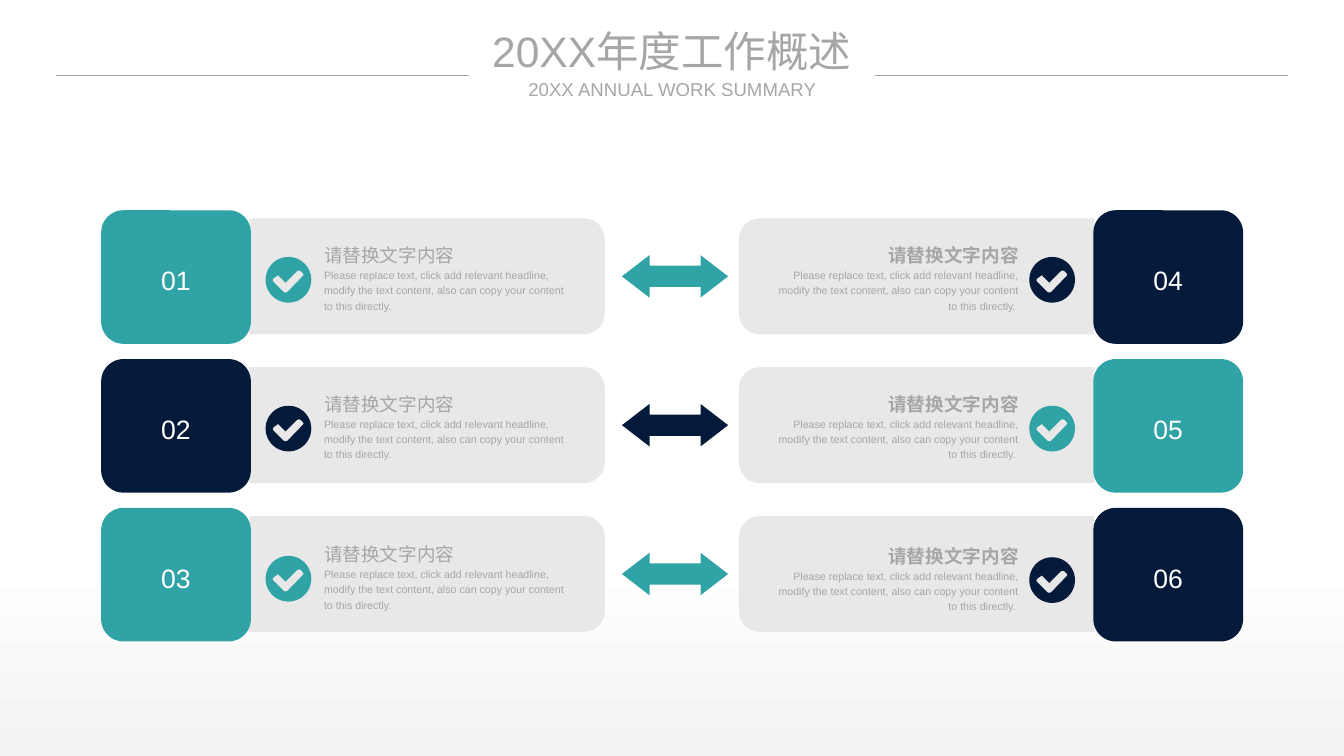
from math import cos, pi, sin

from lxml.etree import SubElement
from pptx import Presentation
from pptx.dml.color import RGBColor
from pptx.enum.shapes import MSO_CONNECTOR as Connector, MSO_SHAPE as Shape
from pptx.enum.text import MSO_ANCHOR as Anchor, MSO_AUTO_SIZE as AutoSize, PP_ALIGN as Align
from pptx.oxml.ns import qn
from pptx.util import Pt

COLORS = {
    "teal": "2FA3A5",
    "navy": "041A3B",
    "panel": "E6E6E6",
    "text": "A6A6A6",
    "white": "FFFFFF",
    "floor": "F2F2F2",
}
FONT = "Arial"
HEADLINE = "请替换文字内容"
DETAIL = (
    "Please replace text, click add relevant headline, modify the text content, "
    "also can copy your content to this directly."
)
ROW_TOP, ROW_PITCH = 158.4, 112.1
CARD_WIDTH, CARD_HEIGHT = 112.8, 100.6
PANEL_WIDTH, PANEL_HEIGHT = 267.7, 87.3
CHECK_RADIUS = 17.2
CHECK_MARK = [
    (10.8, -5), (9.4, -6.5), (7.9, -7.1), (6.5, -6.5), (-2.2, 2.2),
    (-7.2, -2.9), (-7.9, -3.5), (-8.6, -2.9), (-11.5, -0.8), (-11.9, 0.2),
    (-11.5, 1.3), (-3.6, 9.1), (-2.2, 9.7), (-0.7, 9.1), (10.8, -2.8), (11.5, -3.8),
]
SIDES = [
    {
        "card": 76.2, "panel": 187.9, "turn": 90, "check": 217.3, "text": 244.1,
        "align": Align.LEFT, "bold": False, "ending": "",
        "items": [("01", "teal", 0), ("02", "navy", 0), ("03", "teal", 1)],
    },
    {
        "card": 823.6, "panel": 556.6, "turn": 270, "check": 792.6, "text": 581.6,
        "align": Align.RIGHT, "bold": True, "ending": " ",
        "items": [("04", "navy", 0), ("05", "teal", 0), ("06", "navy", 2)],
    },
]


def rgb(color):
    return RGBColor.from_string(COLORS[color])


def set_values(target, values):
    for name, value in values.items():
        setattr(target, name, value)


def paint(shape, color):
    shape.shadow.inherit = False
    shape.fill.solid()
    shape.fill.fore_color.rgb = rgb(color)
    shape.line.fill.background()


def add_block(page, kind, left, top, width, height, color):
    block = page.shapes.add_shape(kind, Pt(left), Pt(top), Pt(width), Pt(height))
    paint(block, color)
    return block


def format_frame(frame, **values):
    margins = dict.fromkeys(["margin_left", "margin_top", "margin_right", "margin_bottom"], 0)
    set_values(frame, {**margins, "word_wrap": True, **values})
    return frame.paragraphs[0]


def add_span(para, text, size, color="text", bold=False):
    span = para.add_run()
    span.text = text
    set_values(span.font, {"name": FONT, "size": Pt(size), "bold": bold})
    span.font.color.rgb = rgb(color)


def add_text(page, left, top, width, height, anchor, **values):
    box = page.shapes.add_textbox(Pt(left), Pt(top), Pt(width), Pt(height))
    para = format_frame(
        box.text_frame, vertical_anchor=anchor, auto_size=AutoSize.SHAPE_TO_FIT_TEXT
    )
    set_values(para, values)
    return para


def add_rule(page, left, right, top):
    rule = page.shapes.add_connector(Connector.STRAIGHT, Pt(left), Pt(top), Pt(right), Pt(top))
    rule.line.width = Pt(1)
    rule.line.color.rgb = rgb("text")
    SubElement(rule.element.spPr, qn("a:effectLst"))


def add_panel(page, left, top, turn):
    inset = (PANEL_WIDTH - PANEL_HEIGHT) / 2
    panel = add_block(
        page, Shape.ROUND_2_SAME_RECTANGLE,
        left + inset, top - inset, PANEL_HEIGHT, PANEL_WIDTH, "panel",
    )
    panel.rotation = turn
    panel.adjustments[0] = 0.18
    color = panel.element.spPr.find(f"{qn('a:solidFill')}/{qn('a:srgbClr')}")
    SubElement(color, qn("a:alpha")).set("val", "90000")


def add_card(page, left, top, number, color):
    card = add_block(page, Shape.ROUNDED_RECTANGLE, left, top, CARD_WIDTH, CARD_HEIGHT, color)
    para = format_frame(card.text_frame, vertical_anchor=Anchor.MIDDLE)
    set_values(para, {"alignment": Align.CENTER, "line_spacing": 1.2})
    add_span(para, number, 20, "white")


def add_check(page, center_x, center_y, color):
    steps = 72
    angles = [2 * pi * step / steps for step in range(steps)]
    circle = [(CHECK_RADIUS * cos(angle), CHECK_RADIUS * sin(angle)) for angle in angles]
    disc, mark = [
        [(Pt(center_x + x), Pt(center_y + y)) for x, y in outline]
        for outline in (circle, CHECK_MARK)
    ]
    builder = page.shapes.build_freeform(*disc[0])
    builder.add_line_segments(disc[1:], close=True)
    builder.move_to(*mark[0])
    builder.add_line_segments(mark[1:], close=True)
    paint(builder.convert_to_shape(), color)


def add_item(page, side, row, number, color, nudge):
    top = ROW_TOP + row * ROW_PITCH
    add_panel(page, side["panel"], top + 6.1, side["turn"])
    add_check(page, side["check"], top + 52.4 + nudge, color)
    para = add_text(
        page, side["text"], top + 22.3 + nudge, 185.8, 55.4, Anchor.TOP,
        alignment=side["align"], line_spacing=1.2,
    )
    add_span(para, HEADLINE, 14, bold=side["bold"])
    para.add_line_break()
    add_span(para, DETAIL + side["ending"], 8)
    add_card(page, side["card"], top, number, color)


def add_arrow(page, row, color):
    top = ROW_TOP + 33.8 + row * ROW_PITCH
    arrow = add_block(page, Shape.LEFT_RIGHT_ARROW, 468.5, top, 80, 32, color)
    arrow.adjustments[0] = 0.5
    arrow.adjustments[1] = 0.65


def add_background(page):
    fill = page.background.fill
    fill.gradient()
    fill.gradient_angle = 90
    for stop, (position, color) in zip(fill.gradient_stops, [(0, "floor"), (0.26, "white")]):
        stop.position = position
        stop.color.rgb = rgb(color)


def add_heading(page):
    title = add_text(page, 350.6, 18.7, 311, 38.9, Anchor.MIDDLE, alignment=Align.CENTER)
    add_span(title, "20XX年度工作概述", 32)
    subtitle = add_text(page, 396, 58.9, 221, 17, Anchor.MIDDLE, alignment=Align.CENTER)
    add_span(subtitle, "20XX ANNUAL WORK SUMMARY", 14)
    for left, right in [(42.3, 353.4), (659, 970.1)]:
        add_rule(page, left, right, 56.9)


def main():
    deck = Presentation()
    set_values(deck, {"slide_width": Pt(1012.4), "slide_height": Pt(569.5)})
    page = deck.slides.add_slide(deck.slide_layouts[6])
    add_background(page)
    add_heading(page)
    for side in SIDES:
        for row, item in enumerate(side["items"]):
            add_item(page, side, row, *item)
    for row, color in enumerate(["teal", "navy", "teal"]):
        add_arrow(page, row, color)
    deck.save("out.pptx")


if __name__ == "__main__":
    main()
